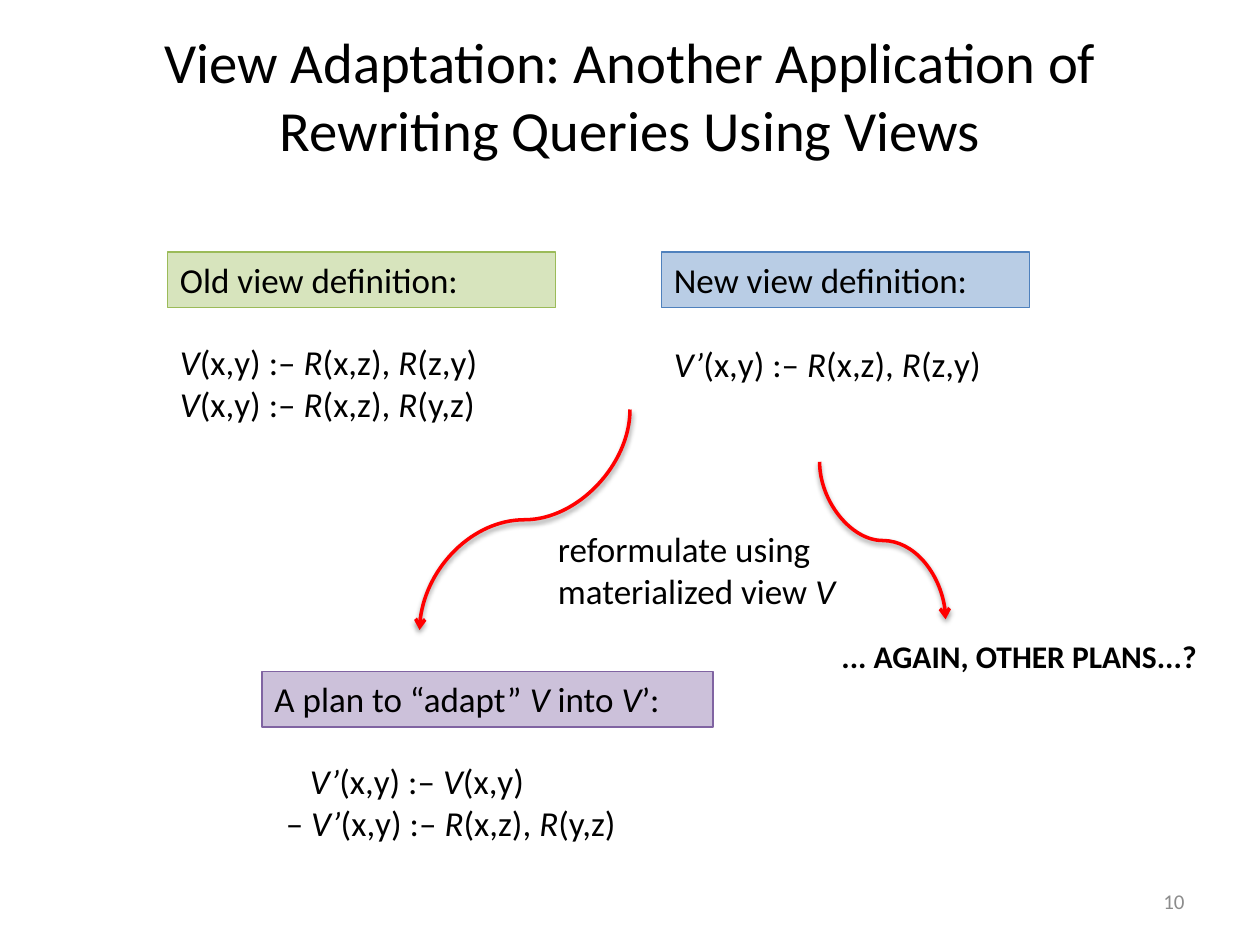
import pptx
import pptx.util
import pptx.dml.color
import pptx.oxml
import pptx.oxml.ns
import pptx.enum.text
import pptx.enum.shapes

Inches, Pt = pptx.util.Inches, pptx.util.Pt
Align, Anchor = pptx.enum.text.PP_ALIGN, pptx.enum.text.MSO_ANCHOR

# Content: asterisks enclose italics; boxes are left, top, width, height
TITLE = "View Adaptation: Another Application of Rewriting Queries Using Views"
HEADS = [
    ("Old view definition:", (1.33, 2, 3.08, 0.44), "D7E4BD", "9BBB59"),
    ("New view definition:", (5.25, 2, 2.92, 0.44), "B9CDE5", "4F81BD"),
    ("A plan to “adapt” *V* into *V*’:", (2.08, 5.33, 3.58, 0.44), "CCC1DA", "8064A2"),
]
# Each line is its text and its indent
RULES = [
    ((1.33, 2.65, 2.92, 0.77), [("*V*(x,y) :– *R*(x,z), *R*(z,y)", 0),
                                ("*V*(x,y) :– *R*(x,z), *R*(y,z)", 0)]),
    ((5.25, 2.67, 2.92, 0.44), [("*V’*(x,y) :– *R*(x,z), *R*(z,y)", 0)]),
    ((2.17, 5.98, 4.08, 0.77), [("*V’*(x,y) :– *V*(x,y)", 0.19),
                                ("–* V’*(x,y) :– *R*(x,z), *R*(y,z)", 0)]),
    ((4.33, 4.14, 2.5, 0.77), [("reformulate using materialized view *V*", 0)]),
]
# Start x, start y, end x, end y before the turn, then the turn in degrees
CURVES = [
    ((3.29, 3.29, 5.04, 4.96), 90),
    ((7.63, 3.79, 6.38, 4.79), 270),
]


def color(code):
    return pptx.dml.color.RGBColor.from_string(code)


def write(frame, lines, size=20, ink="000000", align=Align.LEFT,
          anchor=Anchor.TOP, bold=None):
    frame.word_wrap = True
    frame.auto_size = pptx.enum.text.MSO_AUTO_SIZE.NONE
    frame.vertical_anchor = anchor
    for i, (text, indent) in enumerate(lines):
        para = frame.add_paragraph() if i else frame.paragraphs[0]
        para.alignment = align
        font = para.font
        font.name, font.size, font.bold = "Calibri", Pt(size), bold
        font.color.rgb = color(ink)
        if indent:
            para._p.get_or_add_pPr().set("marL", str(Inches(indent)))
        for k, part in enumerate(text.split("*")):
            if part:
                run = para.add_run()
                run.text = part
                if k % 2:
                    run.font.italic = True


def label(box, lines, **style):
    shape = slide.shapes.add_textbox(*map(Inches, box))
    write(shape.text_frame, lines, **style)


def head(text, box, fill, edge):
    shape = slide.shapes.add_shape(
        pptx.enum.shapes.MSO_SHAPE.RECTANGLE, *map(Inches, box))
    shape.shadow.inherit = False
    shape.fill.solid()
    shape.fill.fore_color.rgb = color(fill)
    shape.line.color.rgb = color(edge)
    shape.line.width = Pt(0.75)
    write(shape.text_frame, [(text, 0)])


def curve(ends, turn):
    link = slide.shapes.add_connector(
        pptx.enum.shapes.MSO_CONNECTOR.CURVE, *map(Inches, ends))
    link.line.color.rgb = color("FF0000")
    link.line.width = Pt(2)
    props = link._element.spPr
    props.find(pptx.oxml.ns.qn("a:xfrm")).set("rot", str(turn * 60000))
    space = pptx.oxml.ns.nsdecls("a")
    link.line._get_or_add_ln().append(
        pptx.oxml.parse_xml(f'<a:tailEnd {space} type="arrow"/>'))
    props.append(pptx.oxml.parse_xml(
        f'<a:effectLst {space}><a:outerShdw blurRad="{Pt(3.1)}" dist="{Pt(1.6)}" '
        'dir="5400000" rotWithShape="0"><a:srgbClr val="000000">'
        '<a:alpha val="38000"/></a:srgbClr></a:outerShdw></a:effectLst>'))


deck = pptx.Presentation()
deck.slide_width, deck.slide_height = Inches(10), Inches(7.5)
slide = deck.slides.add_slide(deck.slide_layouts[5])

# Title
title = slide.shapes.title
title.left, title.top, title.width, title.height = map(Inches, (0.5, 0.42, 9, 0.67))
write(title.text_frame, [(TITLE, 0)], size=32.4, align=Align.CENTER,
      anchor=Anchor.MIDDLE)

# Views and plan
for item in HEADS:
    head(*item)
for box, lines in RULES:
    label(box, lines)

# Arrows
for ends, turn in CURVES:
    curve(ends, turn)

# Closing question and page number
label((6.58, 5.01, 3.17, 0.4), [("... AGAIN, OTHER PLANS...?", 0)], size=18, bold=True)
label((7.17, 6.95, 2.33, 0.4), [("10", 0)], size=12, ink="8C8C8C",
      align=Align.RIGHT, anchor=Anchor.MIDDLE)

deck.save("out.pptx")
